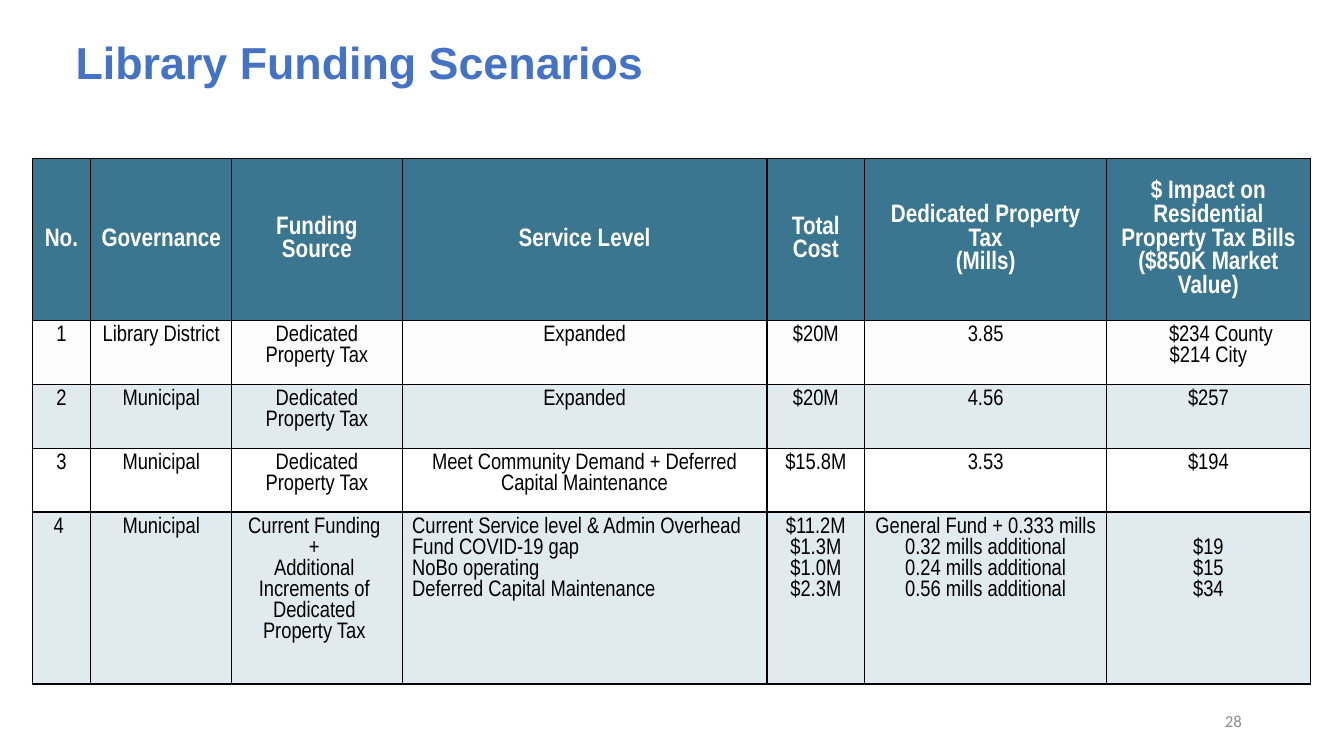
"""Build the library funding scenarios slide."""
from lxml import etree
from pptx import Presentation
from pptx.dml.color import RGBColor
from pptx.enum import text as t
from pptx.oxml import ns
from pptx.util import Pt

THEME = {
    "title": "4472C4", "header": "3A768F", "tint": "CFD5EA", "text": "000000",
    "inverse": "FFFFFF", "muted": "8C8C8C", "border": "000000",
    "title_size": 32, "header_size": 18, "body_size": 16, "number_size": 12,
    "title_font": "Arial", "table_font": "Arial Narrow", "number_font": "Calibri",
}
LEFT, CENTER, RIGHT = t.PP_ALIGN.LEFT, t.PP_ALIGN.CENTER, t.PP_ALIGN.RIGHT
TOP, MIDDLE = t.MSO_ANCHOR.TOP, t.MSO_ANCHOR.MIDDLE


def write(frame, content, font, size, color, bold=False, align=CENTER, anchor=TOP):
    """Fill a text frame, one paragraph per line of content."""
    frame.word_wrap = True
    frame.vertical_anchor = anchor
    for index, line in enumerate(content.split("\n")):
        paragraph = frame.paragraphs[0] if index == 0 else frame.add_paragraph()
        paragraph.alignment = align
        run = paragraph.add_run()
        run.text = line
        run.font.name = THEME[font]
        run.font.size = Pt(THEME[size])
        run.font.bold = bold
        run.font.color.rgb = RGBColor.from_string(THEME[color])


def paint(cell, color, alpha):
    """Draw the borders of a cell and fill it, with alpha in percent."""
    properties = cell._tc.get_or_add_tcPr()
    for side in ("a:lnL", "a:lnR", "a:lnT", "a:lnB"):
        line = etree.SubElement(properties, ns.qn(side), w=str(Pt(1)))
        solid = etree.SubElement(line, ns.qn("a:solidFill"))
        etree.SubElement(solid, ns.qn("a:srgbClr"), val=THEME["border"])
    if color is None:
        cell.fill.background()
        return
    cell.fill.solid()
    cell.fill.fore_color.rgb = RGBColor.from_string(THEME[color])
    if alpha < 100:
        tone = properties.find(".//" + ns.qn("a:solidFill") + "[last()]")
        tone = properties.findall(ns.qn("a:solidFill"))[0][0]
        etree.SubElement(tone, ns.qn("a:alpha"), val=str(alpha * 1000))


deck = Presentation()
deck.slide_width, deck.slide_height = Pt(960), Pt(540)
slide = deck.slides.add_slide(deck.slide_layouts[5])

title = slide.shapes.title
title.left, title.top, title.width, title.height = Pt(46.8), Pt(20.9), Pt(756), Pt(46)
title.text_frame.auto_size = t.MSO_AUTO_SIZE.NONE
write(title.text_frame, "Library Funding Scenarios", "title_font", "title_size",
      "title", bold=True, align=LEFT)

page_number = slide.shapes.add_textbox(Pt(678.2), Pt(500.4), Pt(216), Pt(28.8))
write(page_number.text_frame, "28", "number_font", "number_size", "muted",
      align=RIGHT, anchor=MIDDLE)

headings = ["No.", "Governance", "Funding Source", "Service Level", "Total Cost",
            "Dedicated Property Tax\n(Mills)",
            "$ Impact on Residential Property Tax Bills ($850K Market Value)"]
dedicated = "Dedicated\nProperty Tax"
scenarios = [
    ["1", "Library District", dedicated, "Expanded", "$20M", "3.85",
     "$234 County\n$214 City"],
    ["2", "Municipal", dedicated, "Expanded", "$20M", "4.56", "$257"],
    ["3", "Municipal", dedicated,
     "Meet Community Demand + Deferred Capital Maintenance", "$15.8M", "3.53", "$194"],
    ["4", "Municipal",
     "Current Funding +\nAdditional Increments of Dedicated Property Tax",
     "Current Service level & Admin Overhead\nFund COVID-19 gap\n"
     "NoBo operating\nDeferred Capital Maintenance",
     "$11.2M\n$1.3M\n$1.0M\n$2.3M",
     "General Fund + 0.333 mills\n0.32 mills additional\n"
     "0.24 mills additional\n0.56 mills additional",
     "$19\n$15\n$34"],
]
column_widths = [41.8, 100.8, 121.7, 260.6, 69.8, 172.8, 145.4]
row_heights = [115.4, 45.6, 45.6, 45.6, 122.8]
row_fills = [("header", 100), ("tint", 6), ("header", 15), (None, 0), ("header", 15)]

funding = slide.shapes.add_table(len(row_heights), len(column_widths), Pt(23), Pt(113.5),
                                 Pt(sum(column_widths)), Pt(sum(row_heights))).table
funding.horz_banding = False
for column, width in zip(funding.columns, column_widths):
    column.width = Pt(width)
for row, height in zip(funding.rows, row_heights):
    row.height = Pt(height)

for row, (entries, fill) in enumerate(zip([headings] + scenarios, row_fills)):
    for column, entry in enumerate(entries):
        cell = funding.cell(row, column)
        paint(cell, *fill)
        if row == 0:
            cell.vertical_anchor = MIDDLE
            write(cell.text_frame, entry, "table_font", "header_size", "inverse",
                  bold=True, anchor=MIDDLE)
        else:
            write(cell.text_frame, entry, "table_font", "body_size", "text",
                  align=LEFT if (row, column) == (4, 3) else CENTER)

county_impact = funding.cell(1, 6).text_frame.paragraphs[0]
county_impact._p.get_or_add_pPr().set("marL", str(Pt(18)))
funding.cell(4, 0).margin_right = Pt(11)
funding.cell(4, 2).margin_right = Pt(11)
funding.cell(4, 6).margin_top = Pt(18.6)

deck.save("out.pptx")
